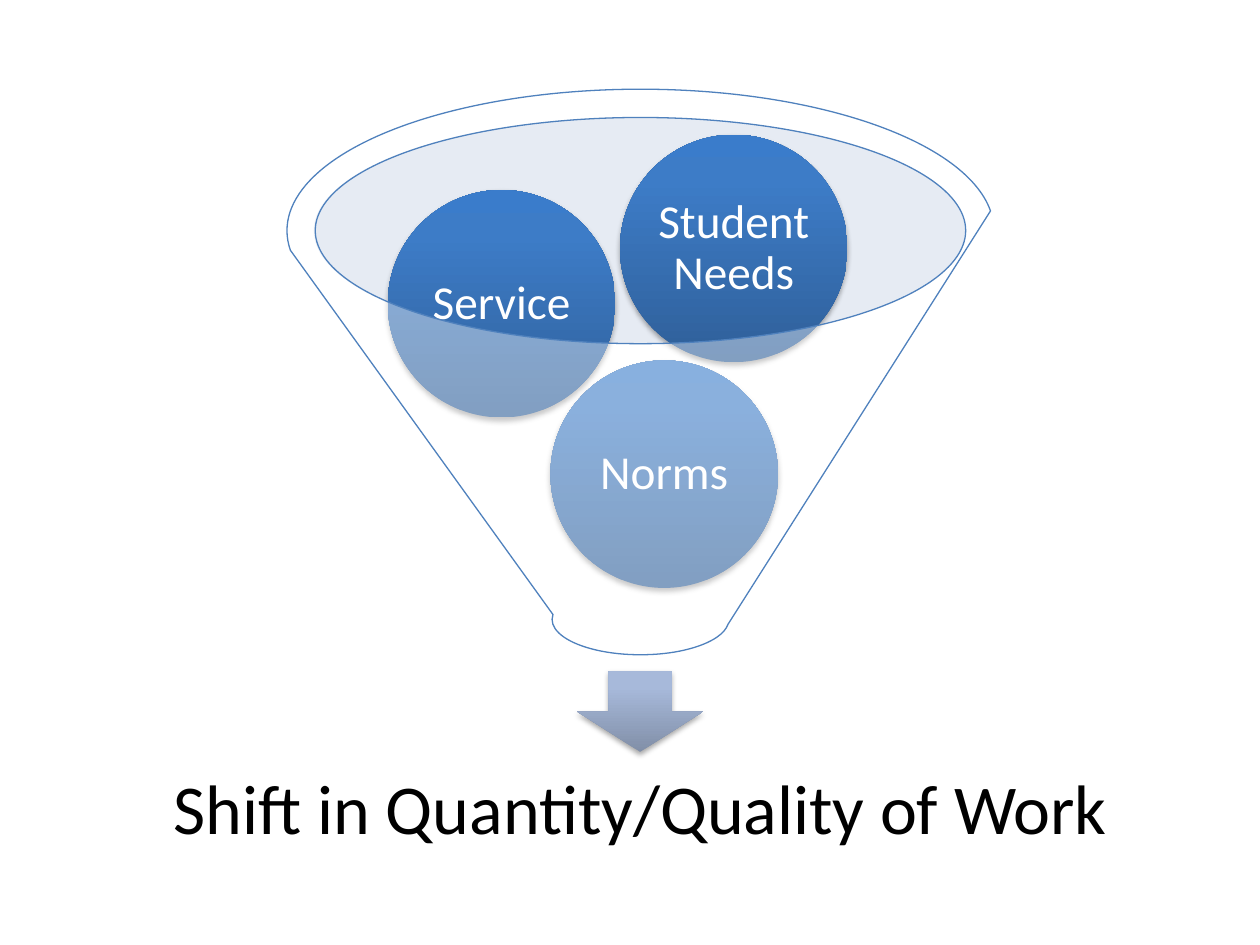
import copy
from dataclasses import dataclass

import pptx
import pptx.dml.color
import pptx.enum.shapes
import pptx.enum.text
import pptx.oxml
import pptx.oxml.ns
import pptx.util
from pptx.util import Pt

Shapes = pptx.enum.shapes.MSO_SHAPE
Rgb = pptx.dml.color.RGBColor.from_string
qn = pptx.oxml.ns.qn


@dataclass(frozen=True)
class Theme:
    font: str = "Calibri"
    ball_size: float = 27
    outcome_size: float = 40
    ball_text: str = "FFFFFF"
    outcome_text: str = "000000"
    mouth: str = "C2CDE1"
    glass: str = "FFFFFF"
    outline: str = "4F81BD"
    opacity: int = 40
    # Gradient stops run from bottom to top
    ball_stops: tuple = ((0, "2F5F99"), (0.8, "3D7CC7"), (1, "3A7CCB"))
    arrow_stops: tuple = ((0, "818FA8"), (0.8, "A7B9DA"), (1, "A7BADC"))


@dataclass(frozen=True)
class Box:
    left: float
    top: float
    width: float
    height: float

    def lengths(self) -> list:
        return [Pt(v) for v in (self.left, self.top, self.width, self.height)]


@dataclass(frozen=True)
class Ball:
    label: str
    left: float
    top: float


THEME = Theme()
BALL_DIAMETER = 130
BALLS = (
    Ball("Norms", 314.6, 206),
    Ball("Service", 221.6, 108.6),
    Ball("Student Needs", 354.3, 77),
)


def add_plain(slide, kind, box: Box):
    shape = slide.shapes.add_shape(kind, *box.lengths())
    shape.shadow.inherit = False
    shape.line.fill.background()
    return shape


def fill_translucent(shape, color: str) -> None:
    shape.fill.solid()
    shape.fill.fore_color.rgb = Rgb(color)
    rgb = shape._element.spPr.find(qn("a:solidFill")).find(qn("a:srgbClr"))
    alpha = rgb.makeelement(qn("a:alpha"), {"val": str(THEME.opacity * 1000)})
    rgb.append(alpha)


def fill_gradient(shape, stops: tuple) -> None:
    shape.fill.gradient()
    shape.fill.gradient_angle = 90
    stop_list = shape._element.spPr.find(qn("a:gradFill")).find(qn("a:gsLst"))
    stop_list.append(copy.deepcopy(stop_list[-1]))
    for stop, (position, color) in zip(shape.fill.gradient_stops, stops):
        stop.position = position
        stop.color.rgb = Rgb(color)


def add_shadow(shape) -> None:
    effects = shape._element.spPr.find(qn("a:effectLst"))
    effects.append(pptx.oxml.parse_xml(
        '<a:outerShdw xmlns:a="http://schemas.openxmlformats.org/drawingml/2006/main"'
        f' blurRad="{Pt(3.15)}" dist="{Pt(1.8)}" dir="5400000" rotWithShape="0">'
        '<a:srgbClr val="000000"><a:alpha val="35000"/></a:srgbClr></a:outerShdw>'))


def write_text(shape, text: str, size: float, color: str, inset: float) -> None:
    frame = shape.text_frame
    frame.word_wrap = True
    frame.vertical_anchor = pptx.enum.text.MSO_ANCHOR.MIDDLE
    frame.margin_left = frame.margin_right = Pt(inset)
    frame.margin_top = frame.margin_bottom = Pt(inset)
    paragraph = frame.paragraphs[0]
    paragraph.text = text
    paragraph.alignment = pptx.enum.text.PP_ALIGN.CENTER
    paragraph.line_spacing = 0.9
    paragraph.font.name = THEME.font
    paragraph.font.size = Pt(size)
    paragraph.font.color.rgb = Rgb(color)


def add_ball(slide, ball: Ball) -> None:
    box = Box(ball.left, ball.top, BALL_DIAMETER, BALL_DIAMETER)
    circle = add_plain(slide, Shapes.OVAL, box)
    fill_gradient(circle, THEME.ball_stops)
    add_shadow(circle)
    write_text(circle, ball.label, THEME.ball_size, THEME.ball_text, 0)


def main() -> None:
    deck = pptx.Presentation()
    deck.slide_width, deck.slide_height = Pt(720), Pt(540)
    slide = deck.slides.add_slide(deck.slide_layouts[6])

    # Funnel mouth
    mouth = add_plain(slide, Shapes.OVAL, Box(179.3, 67, 372.2, 129.6))
    fill_translucent(mouth, THEME.mouth)

    # Arrow and outcome
    arrow = add_plain(slide, Shapes.DOWN_ARROW, Box(329.8, 383.6, 72, 46))
    fill_gradient(arrow, THEME.arrow_stops)
    add_shadow(arrow)
    outcome = slide.shapes.add_textbox(*Box(62, 420.5, 607.7, 86.4).lengths())
    write_text(outcome, "Shift in Quantity/Quality of Work",
               THEME.outcome_size, THEME.outcome_text, 22.4)

    # Balls dropping through the funnel
    for ball in BALLS:
        add_ball(slide, ball)

    # Translucent funnel in front
    funnel = add_plain(slide, Shapes.FUNNEL, Box(164, 51, 404, 323.2))
    fill_translucent(funnel, THEME.glass)
    funnel.line.color.rgb = Rgb(THEME.outline)
    funnel.line.width = Pt(0.75)

    deck.save("out.pptx")


if __name__ == "__main__":
    main()
